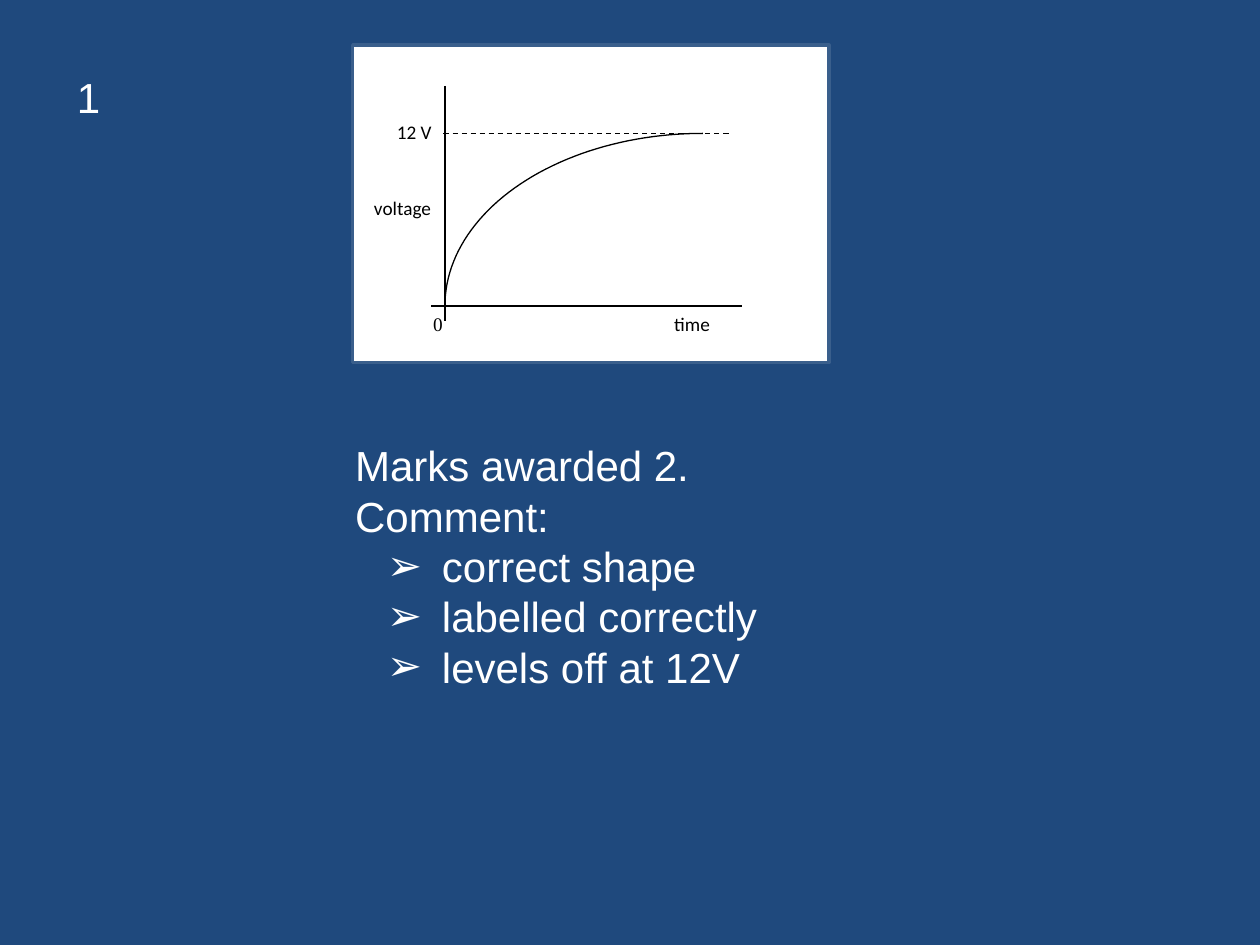
"""Build a slide showing a marked voltage-time graph and its comments."""
from math import cos, pi, sin

from lxml import etree
from pptx import Presentation
from pptx import util as u
from pptx.dml.color import RGBColor
from pptx.enum import dml, shapes, text
from pptx.oxml.ns import qn


def color(value):
    return RGBColor.from_string(value)


def add_text(container, box, lines, font, wrap=True, space_after=0):
    shape = container.add_textbox(*map(u.Cm, box))
    frame = shape.text_frame
    frame.word_wrap = wrap
    frame.text = "\n".join(lines)
    for paragraph in frame.paragraphs:
        paragraph.space_after = u.Pt(space_after)
        for name, value in font.items():
            setattr(paragraph.runs[0].font, name, value)
        paragraph.runs[0].font.color.rgb = color("000000" if space_after else "FFFFFF")
    return shape


presentation = Presentation()
presentation.slide_width, presentation.slide_height = u.Cm(25.4), u.Cm(19.05)
slide = presentation.slides.add_slide(presentation.slide_layouts[6])
slide.background.fill.solid()
slide.background.fill.fore_color.rgb = color("1F497D")

panel = slide.shapes.add_shape(
    shapes.MSO_SHAPE.RECTANGLE, u.Cm(7.11), u.Cm(0.91), u.Cm(9.6), u.Cm(6.4))
panel.shadow.inherit = False
panel.fill.solid()
panel.fill.fore_color.rgb = color("FFFFFF")
panel.line.color.rgb = color("3A5F8C")
panel.line.width = u.Pt(2)

graph = slide.shapes.add_group_shape().shapes
origin_x, origin_y, level_y, curve_end = 8.97, 6.17, 2.69, 14.17

lines = [
    (origin_x, 1.73, origin_x, 6.48, None),
    (8.69, origin_y, 14.96, origin_y, None),
    (8.94, level_y, 14.73, level_y, dml.MSO_LINE.DASH),
]
for *ends, dash in lines:
    connector = graph.add_connector(shapes.MSO_CONNECTOR.STRAIGHT, *map(u.Cm, ends))
    connector.line.color.rgb = color("000000")
    connector.line.width = u.Pt(0.75)
    if dash:
        connector.line.dash_style = dash
    etree.SubElement(connector.element.spPr, qn("a:effectLst"))

steps = 48
angles = [pi / 2 * step / steps for step in range(steps + 1)]
points = [(u.Cm(curve_end - (curve_end - origin_x) * cos(angle)),
           u.Cm(origin_y - (origin_y - level_y) * sin(angle))) for angle in angles]
builder = graph.build_freeform(*points[0])
builder.add_line_segments(points[1:], close=False)
curve = builder.convert_to_shape()
curve.shadow.inherit = False
curve.fill.background()
curve.line.color.rgb = color("000000")
curve.line.width = u.Pt(0.75)

labels = [
    ("0", 8.48, 6.17, 0.69, "Times New Roman"),
    ("12 V", 7.75, 2.31, 1.4, "Calibri"),
    ("time", 13.34, 6.17, 1.93, "Calibri"),
    ("voltage", 7.29, 3.84, 1.93, "Calibri"),
]
for label, left, top, width, name in labels:
    add_text(graph, (left, top, width, 0.84), [label],
             {"name": name, "size": u.Pt(11)}, space_after=10)

body_font = {"name": "Arial", "size": u.Pt(24)}
comments = add_text(
    slide.shapes, (6.91, 8.74, 17.4, 5.38),
    ["Marks awarded 2.", "Comment:", "correct shape", "labelled correctly", "levels off at 12V"],
    body_font)
for paragraph in comments.text_frame.paragraphs[2:]:
    paragraph.level = 1
    properties = paragraph._p.get_or_add_pPr()
    properties.set("marL", str(u.Cm(1.75)))
    properties.set("indent", str(u.Cm(-1.11)))
    etree.SubElement(properties, qn("a:buFont"), typeface="Arial")
    etree.SubElement(properties, qn("a:buChar"), char="➢")

number = add_text(slide.shapes, (1.3, 1.32, 0.99, 1.27), ["1"], body_font, wrap=False)
for shape in (comments, number):
    shape.text_frame.auto_size = text.MSO_AUTO_SIZE.SHAPE_TO_FIT_TEXT

presentation.save("out.pptx")
